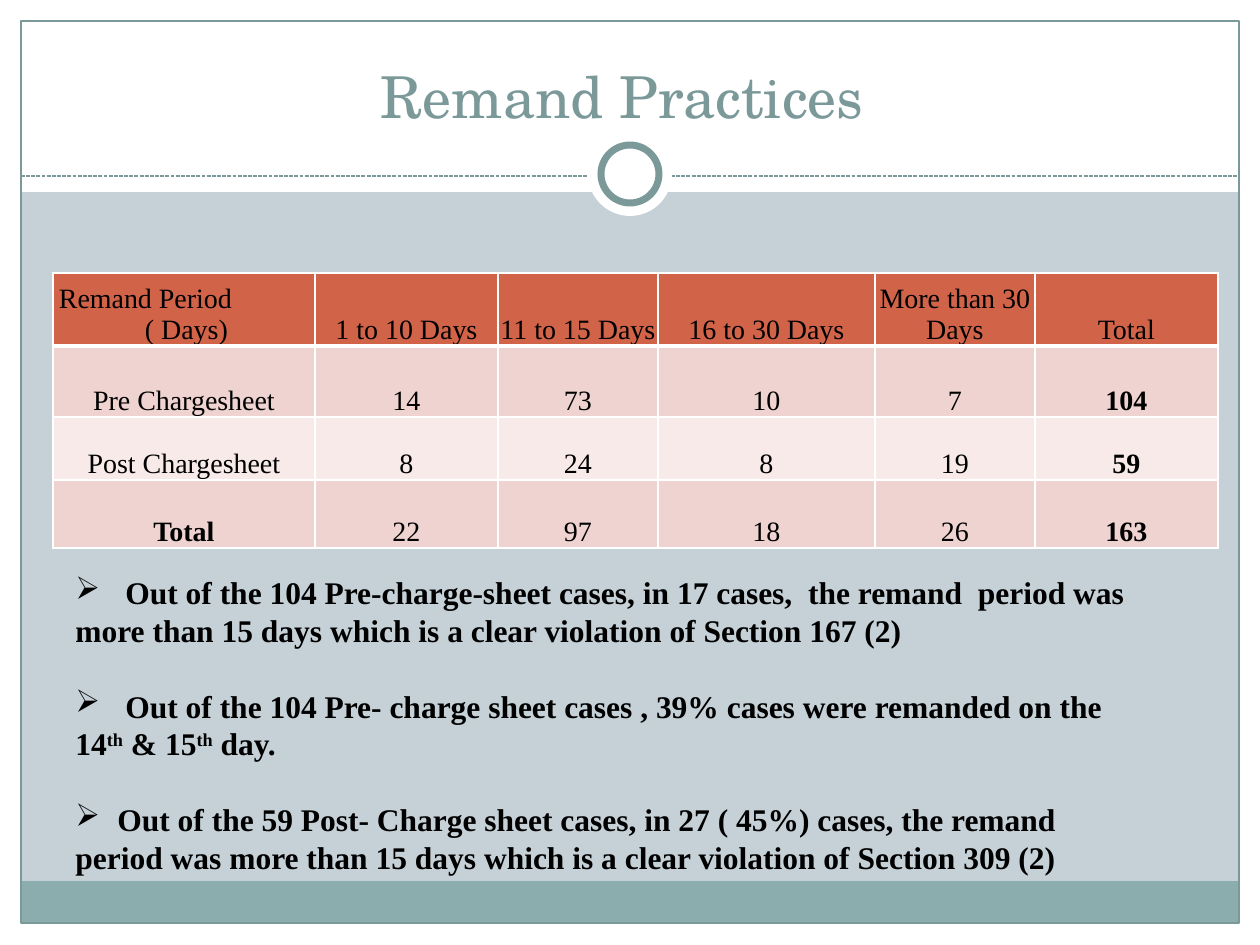
from dataclasses import dataclass
from pptx import Presentation
from pptx import util as u
from pptx.dml.color import RGBColor
from pptx.enum import dml, shapes, text
from pptx.oxml import parse_xml
from pptx.oxml.ns import nsdecls

PX = 914400 / 126


@dataclass(frozen=True)
class Theme:
    """Hold the colours, fonts and type sizes."""
    ground: str = "C5D1D7"
    white: str = "FFFFFF"
    black: str = "000000"
    accent: str = "7C999A"
    footer: str = "8CADAE"
    header: str = "D16349"
    bands: tuple = ("EED3D0", "F7EAE9")
    title_font: str = "TeX Gyre Schola"
    body_font: str = "Times New Roman"
    title_size: int = 33
    table_size: int = 16
    body_size: int = 18
    body_leading: float = 21.6


THEME = Theme()
FRAME = [(0, 923, 1260, 22), (0, 0, 1260, 192), (0, 0, 21, 945), (1239, 0, 21, 945)]
COLUMNS = [262, 183, 160, 217, 160, 183]
ROWS = [73, 71, 63, 68]
TABLE = [
    ["Remand Period\n( Days)", "1 to 10 Days", "11 to 15 Days", "16 to 30 Days",
     "More than 30 Days", "Total"],
    ["Pre Chargesheet", "14", "73", "10", "7", "104"],
    ["Post Chargesheet", "8", "24", "8", "19", "59"],
    ["Total", "22", "97", "18", "26", "163"],
]
FINDINGS = [
    (50, ["Out of the 104 Pre-charge-sheet cases, in 17 cases,  the remand  period was "
          "more than 15 days which is a clear violation of Section 167 (2)"]),
    (50, ["Out of the 104 Pre- charge sheet cases , 39% cases were remanded on the 14",
          "th", " & 15", "th", " day."]),
    (42, ["Out of the 59 Post- Charge sheet cases, in 27 ( 45%) cases, the remand "
          "period was more than 15 days which is a clear violation of Section 309 (2)"]),
]


def px(length):
    """Turn px into EMU."""
    return u.Emu(round(length * PX))


def rgb(colour):
    """Turn a hex string into a colour."""
    return RGBColor.from_string(colour)


def style(font, name, size, colour, bold=False):
    """Format one font."""
    font.name, font.size, font.bold = name, u.Pt(size), bold
    font.color.rgb = rgb(colour)


def add_block(page, kind, bounds, fill=None, line=None, width=0.75):
    """Add a preset shape with an optional fill and outline."""
    block = page.shapes.add_shape(kind, *map(px, bounds))
    block.shadow.inherit = False
    if fill:
        block.fill.solid()
        block.fill.fore_color.rgb = rgb(fill)
    else:
        block.fill.background()
    if line:
        block.line.color.rgb = rgb(line)
        block.line.width = u.Pt(width)
    else:
        block.line.fill.background()


def add_divider(page, left, right, top):
    """Add the dashed line under the title."""
    line = page.shapes.add_connector(shapes.MSO_CONNECTOR.STRAIGHT,
                                     px(left), px(top), px(right), px(top))
    line.line.color.rgb = rgb(THEME.accent)
    line.line.width = u.Pt(0.75)
    line.line.dash_style = dml.MSO_LINE.SQUARE_DOT
    line.element.spPr.append(parse_xml(f"<a:effectLst {nsdecls('a')}/>"))


def add_frame(page):
    """Draw the margins, footer band, outline, divider and ring."""
    rectangle, oval = shapes.MSO_SHAPE.RECTANGLE, shapes.MSO_SHAPE.OVAL
    for bounds in FRAME:
        add_block(page, rectangle, bounds, THEME.white)
    add_block(page, rectangle, (21, 881, 1217, 42), THEME.footer)
    add_block(page, rectangle, (21, 21, 1218, 902), line=THEME.accent)
    add_divider(page, 21, 1239, 176)
    add_block(page, oval, (588, 132, 84, 84), THEME.white)
    add_block(page, oval, (601, 145, 58, 58), THEME.white, THEME.accent, 4)


def set_title(page, wording):
    """Place the title in front of the frame."""
    title = page.shapes.title
    title.left, title.top, title.width, title.height = map(px, (42, 32, 1176, 104))
    frame = title.text_frame
    frame.text = wording
    frame.vertical_anchor = text.MSO_ANCHOR.BOTTOM
    frame.auto_size = text.MSO_AUTO_SIZE.NONE
    para = frame.paragraphs[0]
    para.alignment = text.PP_ALIGN.CENTER
    style(para.runs[0].font, THEME.title_font, THEME.title_size, THEME.accent)
    page.shapes.element.append(title.element)


def set_borders(cell, bottom):
    """Give a cell white borders, with its own bottom width."""
    properties = cell._tc.get_or_add_tcPr()
    for index, (side, width) in enumerate(zip("LRTB", (1, 1, 1, bottom))):
        properties.insert(index, parse_xml(
            f'<a:ln{side} {nsdecls("a")} w="{u.Pt(width)}"><a:solidFill>'
            f'<a:srgbClr val="{THEME.white}"/></a:solidFill></a:ln{side}>'))


def fill_cell(cell, wording, fill, bold, bottom):
    """Write and format one table cell."""
    cell.text = wording
    cell.vertical_anchor = text.MSO_ANCHOR.BOTTOM
    cell.margin_left = cell.margin_right = cell.margin_top = px(1)
    cell.margin_bottom = 0
    cell.fill.solid()
    cell.fill.fore_color.rgb = rgb(fill)
    for para in cell.text_frame.paragraphs:
        para.alignment = text.PP_ALIGN.CENTER
        for span in para.runs:
            style(span.font, THEME.body_font, THEME.table_size, THEME.black, bold)
    set_borders(cell, bottom)


def add_remand_table(page):
    """Add the table of remand periods."""
    bounds = map(px, (53, 273, sum(COLUMNS), sum(ROWS)))
    table = page.shapes.add_table(len(ROWS), len(COLUMNS), *bounds).table
    for column, width in zip(table.columns, COLUMNS):
        column.width = px(width)
    for index, (row, height, wordings) in enumerate(zip(table.rows, ROWS, TABLE)):
        row.height = px(height)
        fill = THEME.bands[(index - 1) % 2] if index else THEME.header
        for place, (cell, wording) in enumerate(zip(row.cells, wordings)):
            last = place == len(COLUMNS) - 1
            bold = index > 0 and (last or wording == "Total")
            fill_cell(cell, wording, fill, bold, 1 if index else 3)
    corner = table.cell(0, 0)
    corner.margin_left = px(6)
    corner.text_frame.paragraphs[0].alignment = text.PP_ALIGN.LEFT


def set_bullet(para, tab):
    """Give a paragraph an arrow bullet and a tab stop for its text."""
    properties = para._p.get_or_add_pPr()
    properties.set("marL", "0")
    properties.set("indent", "0")
    for markup in (f'<a:buChar {nsdecls("a")} char="➢"/>',
                   f'<a:tabLst {nsdecls("a")}><a:tab pos="{px(tab)}" algn="l"/></a:tabLst>'):
        properties.append(parse_xml(markup))


def add_findings(page):
    """Add the bulleted findings, with every second span raised."""
    box = page.shapes.add_textbox(*map(px, (63, 567, 1092, 318)))
    frame = box.text_frame
    frame.word_wrap = True
    for index, (tab, wordings) in enumerate(FINDINGS):
        para = frame.add_paragraph() if index else frame.paragraphs[0]
        para.line_spacing = para.space_after = u.Pt(THEME.body_leading)
        set_bullet(para, tab)
        for place, wording in enumerate(wordings):
            span = para.add_run()
            span.text = wording if place else "\t" + wording
            style(span.font, THEME.body_font, THEME.body_size, THEME.black, True)
            if place % 2:
                span._r.get_or_add_rPr().set("baseline", "30000")


def main():
    """Build and save the deck."""
    deck = Presentation()
    deck.slide_width, deck.slide_height = px(1260), px(945)
    page = deck.slides.add_slide(deck.slide_layouts[5])
    page.background.fill.solid()
    page.background.fill.fore_color.rgb = rgb(THEME.ground)
    add_frame(page)
    set_title(page, "Remand Practices ")
    add_remand_table(page)
    add_findings(page)
    deck.save("out.pptx")


if __name__ == "__main__":
    main()
